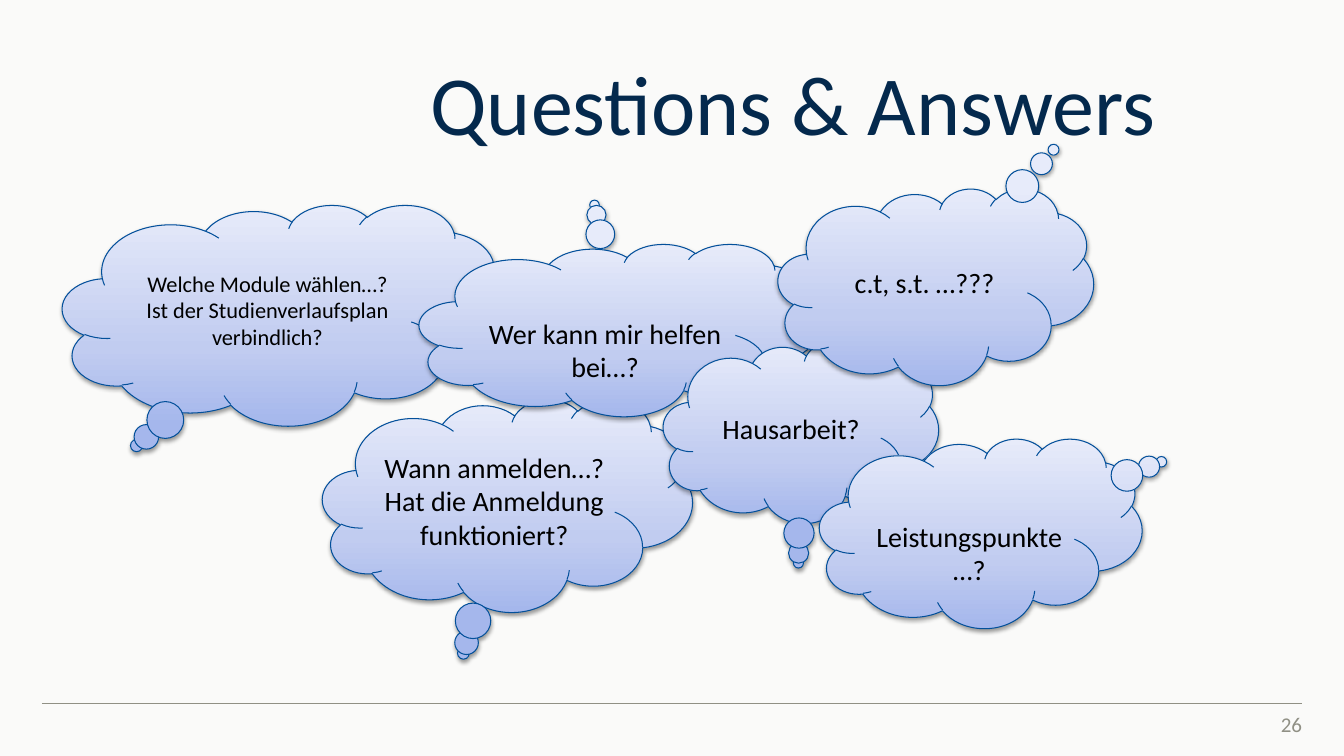
from copy import deepcopy

from lxml import etree
from pptx import Presentation
from pptx import util as u
from pptx.dml import color
from pptx.enum import shapes, text
from pptx.oxml import ns

NAVY, BLUE, GREY, PAPER, BLACK = "04294D", "03509A", "909085", "FAFAF9", "000000"
GRADIENT = [(0, "A5B7EC"), (0.35, "C1CCF0"), (1, "E7EBFA")]
LOWERED = {"margin_top": u.Pt(34), "margin_bottom": u.Pt(0)}

BUBBLES = [
    ((44.6, 146.2, 315.4, 157.7), (-0.332, 0.591), 16,
     ["Welche Module wählen…?", "Ist der Studienverlaufsplan verbindlich?"], {}),
    ((230.4, 285.1, 264.2, 151.9), (-0.119, 0.695), 20,
     ["Wann anmelden…?", "Hat die Anmeldung funktioniert?"], {}),
    ((299.5, 174.2, 285.8, 123.1), (-0.062, -0.726), 20,
     ["Wer kann mir helfen bei…?"], LOWERED),
    ((473.8, 244.1, 196.6, 129.6), (-0.009, 0.72), 20, ["Hausarbeit?"], {}),
    ((585.4, 313.2, 230.4, 135.4), (0.56, -0.377), 20, ["Leistungspunkte…?"], LOWERED),
    ((555.8, 134.6, 225.4, 140.4), (0.373, -0.697), 20, ["c.t, s.t. …???"], {}),
]


def rgb(value):
    return color.RGBColor.from_string(value)


def apply(target, values):
    for name, value in values.items():
        setattr(target, name, value)


def place(shape, box):
    apply(shape, dict(zip(("left", "top", "width", "height"), map(u.Pt, box))))


def write(shape, lines, size, hue, align, frame_format):
    frame = shape.text_frame
    apply(frame, {"word_wrap": True, "vertical_anchor": text.MSO_ANCHOR.MIDDLE, **frame_format})
    frame.text = "\n".join(lines)
    for paragraph in frame.paragraphs:
        paragraph.alignment = align
        apply(paragraph.font, {"name": "Calibri", "size": u.Pt(size)})
        paragraph.font.color.rgb = rgb(hue)


def paint_gradient(shape):
    shape.fill.gradient()
    shape.fill.gradient_angle = 90
    stop_list = shape.element.spPr.find(ns.qn("a:gradFill")).find(ns.qn("a:gsLst"))
    stop_list.append(deepcopy(stop_list[-1]))
    for stop, (position, hue) in zip(shape.fill.gradient_stops, GRADIENT):
        stop.position = position
        stop.color.rgb = rgb(hue)


def cast_shadow(shape):
    shape.shadow.inherit = False
    effects = shape.element.spPr.find(ns.qn("a:effectLst"))
    shadow = etree.SubElement(effects, ns.qn("a:outerShdw"), blurRad=str(u.Pt(3.1)),
                              dist=str(u.Pt(1.6)), dir="5400000", rotWithShape="0")
    hue = etree.SubElement(shadow, ns.qn("a:srgbClr"), val=BLACK)
    etree.SubElement(hue, ns.qn("a:alpha"), val="38000")


def add_bubble(slide, box, tail, size, lines, frame_format):
    bubble = slide.shapes.add_shape(shapes.MSO_SHAPE.CLOUD_CALLOUT, *map(u.Pt, box))
    for index, offset in enumerate(tail):
        bubble.adjustments[index] = offset
    paint_gradient(bubble)
    bubble.line.color.rgb = rgb(BLUE)
    bubble.line.width = u.Pt(0.75)
    cast_shadow(bubble)
    write(bubble, lines, size, BLACK, text.PP_ALIGN.CENTER, frame_format)


def add_rule(slide, left, right, top):
    rule = slide.shapes.add_connector(shapes.MSO_CONNECTOR.STRAIGHT,
                                      *map(u.Pt, (left, top, right, top)))
    rule.line.color.rgb = rgb(GREY)
    rule.line.width = u.Pt(1)
    etree.SubElement(rule.element.spPr, ns.qn("a:effectLst"))


def add_page_number(slide, box, number):
    label = slide.shapes.add_textbox(*map(u.Pt, box))
    margins = {f"margin_{side}": 0 for side in ("left", "top", "right", "bottom")}
    write(label, [number], 15, GREY, text.PP_ALIGN.RIGHT, margins)


def main():
    presentation = Presentation()
    apply(presentation, {"slide_width": u.Pt(960), "slide_height": u.Pt(540)})
    slide = presentation.slides.add_slide(presentation.slide_layouts[5])
    slide.background.fill.solid()
    slide.background.fill.fore_color.rgb = rgb(PAPER)

    title = slide.shapes.title
    place(title, (230.4, 33.8, 671.8, 77.8))
    write(title, ["Questions & Answers"], 60, NAVY, text.PP_ALIGN.CENTER,
          {"auto_size": text.MSO_AUTO_SIZE.NONE})
    add_rule(slide, 30, 930, 502.5)
    for bubble in BUBBLES:
        add_bubble(slide, *bubble)
    add_page_number(slide, (870, 502.5, 60, 30), "26")
    presentation.save("out.pptx")


if __name__ == "__main__":
    main()
